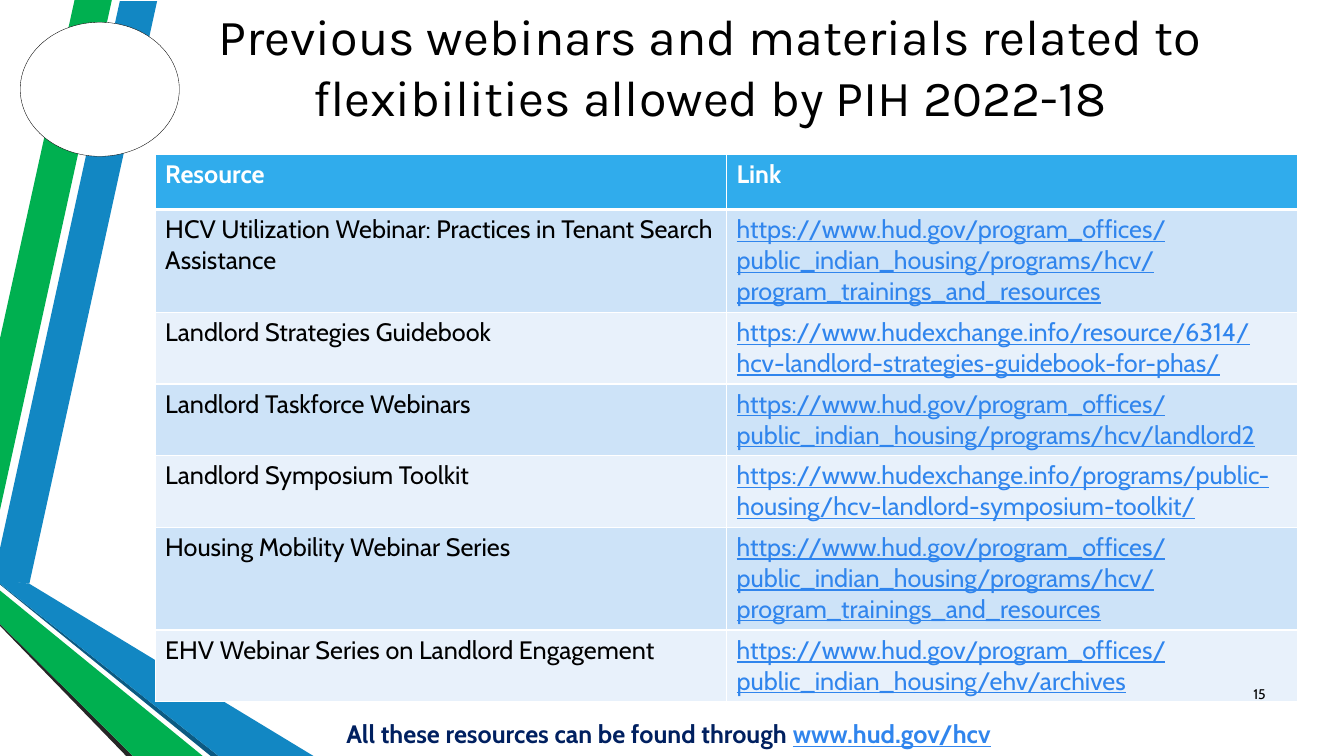
from dataclasses import dataclass

from lxml.etree import SubElement
from pptx import Presentation
from pptx.dml.color import RGBColor
from pptx.enum.shapes import MSO_SHAPE
from pptx.enum.text import MSO_ANCHOR, MSO_AUTO_SIZE, PP_ALIGN
from pptx.oxml.ns import qn
from pptx.util import Cm, Pt

WHITE, BLACK, NAVY = "FFFFFF", "000000", "002060"
BLUE, GREEN, LINK, HEAD = "1287C3", "00B050", "3085ED", "30ACEC"
STRIPES = ("E8F1FB", "CDE3F8")
BODY = "Cabin"


@dataclass
class Band:
    color: str
    points: list[tuple[float, float]]


@dataclass
class Entry:
    name: str
    link: str
    height: float


BANDS = [
    Band(BLUE, [(0, 13.82), (0, 14.63), (0.74, 14.71), (3.96, 0.03), (3.02, 0.03)]),
    Band(GREEN, [(2.82, 0), (1.88, 0), (0, 8.53), (0, 12.85)]),
    Band("262626", [(0, 15.72), (0, 15.77), (3.18, 19.05), (3.35, 19.05)]),
    Band("0C5A82", [(0, 14.71), (0, 14.73), (5.31, 19.05), (5.51, 19.05)]),
    Band(BLUE, [(0, 14.71), (5.51, 19.05), (7.9, 19.05), (0.74, 14.71), (0, 14.61)]),
    Band(GREEN, [(0, 15.72), (3.35, 19.05), (5.11, 19.05), (0, 14.88)]),
]

HUD = "https://www.hud.gov/program_offices/public_indian_housing/"
GUIDE = "https://www.hudexchange.info/"
TRAIN = HUD + "programs/hcv/program_trainings_and_resources"
ENTRIES = [
    Entry("Resource", "Link", 1.39),
    Entry("HCV Utilization Webinar: Practices in Tenant Search Assistance", TRAIN, 2.59),
    Entry("Landlord Strategies Guidebook",
          GUIDE + "resource/6314/hcv-landlord-strategies-guidebook-for-phas/", 1.8),
    Entry("Landlord Taskforce Webinars", HUD + "programs/hcv/landlord2", 1.8),
    Entry("Landlord Symposium Toolkit",
          GUIDE + "programs/public-housing/hcv-landlord-symposium-toolkit/", 1.8),
    Entry("Housing Mobility Webinar Series", TRAIN, 2.59),
    Entry("EHV Webinar Series on Landlord Engagement", HUD + "ehv/archives", 1.8),
]


def rgb(color: str) -> RGBColor:
    return RGBColor.from_string(color)


def style(run, size: float, color: str, bold: bool = False,
          under: bool = False, face: str = BODY) -> None:
    font = run.font
    font.name, font.size, font.bold = face, Pt(size), bold
    font.underline = under
    font.color.rgb = rgb(color)


def place(shape, left: float, top: float, width: float, height: float) -> None:
    shape.left, shape.top = Cm(left), Cm(top)
    shape.width, shape.height = Cm(width), Cm(height)


def paint(shape, color: str) -> None:
    shape.shadow.inherit = False
    shape.fill.solid()
    shape.fill.fore_color.rgb = rgb(color)
    shape.line.fill.background()


def draw_band(slide, band: Band) -> None:
    first, *rest = [(Cm(x), Cm(y)) for x, y in band.points]
    pen = slide.shapes.build_freeform(*first, scale=1.0)
    pen.add_line_segments(rest, close=True)
    paint(pen.convert_to_shape(), band.color)


def edge(cell, bottom: float) -> None:
    props = cell._tc.get_or_add_tcPr()
    widths = {"a:lnL": 1, "a:lnR": 1, "a:lnT": 1, "a:lnB": bottom}
    for tag, width in widths.items():
        line = SubElement(props, qn(tag), w=str(Pt(width)))
        fill = SubElement(line, qn("a:solidFill"))
        SubElement(fill, qn("a:srgbClr"), val=WHITE)


def draw_table(slide, entries: list[Entry]) -> None:
    total = sum(entry.height for entry in entries)
    frame = slide.shapes.add_table(len(entries), 2, Cm(3.91), Cm(3.89),
                                   Cm(28.8), Cm(total))
    table = frame.table
    for column in table.columns:
        column.width = Cm(14.4)
    for i, entry in enumerate(entries):
        table.rows[i].height = Cm(entry.height)
        top = i == 0
        for j, text in enumerate((entry.name, entry.link)):
            cell = table.cell(i, j)
            cell.text_frame.text = text
            color = WHITE if top else (BLACK, LINK)[j]
            run = cell.text_frame.paragraphs[0].runs[0]
            style(run, 18, color, bold=top, under=j == 1 and not top)
            edge(cell, 3 if top else 1)
            cell.fill.solid()
            cell.fill.fore_color.rgb = rgb(HEAD if top else STRIPES[i % 2])


def add_box(slide, left: float, top: float, width: float, height: float):
    box = slide.shapes.add_textbox(Cm(left), Cm(top), Cm(width), Cm(height))
    box.text_frame.word_wrap = True
    return box.text_frame


def main() -> None:
    deck = Presentation()
    deck.slide_width, deck.slide_height = Cm(33.87), Cm(19.05)
    slide = deck.slides.add_slide(deck.slide_layouts[5])

    # Side bands and round badge
    for band in BANDS:
        draw_band(slide, band)
    badge = slide.shapes.add_shape(MSO_SHAPE.OVAL, Cm(0.51), Cm(0.56),
                                   Cm(4.01), Cm(3.38))
    paint(badge, WHITE)
    badge.line.color.rgb = rgb(BLACK)
    badge.line.width = Pt(0.25)

    # Title
    title = slide.shapes.title
    place(title, 3.63, -0.05, 28.52, 3.43)
    frame = title.text_frame
    frame.text = ("Previous webinars and materials related to "
                  "flexibilities allowed by PIH 2022-18")
    frame.word_wrap = True
    frame.auto_size = MSO_AUTO_SIZE.NONE
    frame.vertical_anchor = MSO_ANCHOR.MIDDLE
    frame.paragraphs[0].alignment = PP_ALIGN.CENTER
    style(frame.paragraphs[0].runs[0], 36, BLACK, face="Karla")

    # Resource table
    draw_table(slide, ENTRIES)

    # Slide number
    frame = add_box(slide, 30.58, 16.97, 1.57, 1.02)
    frame.text = "15"
    frame.vertical_anchor = MSO_ANCHOR.MIDDLE
    frame.paragraphs[0].alignment = PP_ALIGN.RIGHT
    style(frame.paragraphs[0].runs[0], 10, BLACK)

    # Closing line
    frame = add_box(slide, 8.48, 17.98, 16.92, 1.02)
    frame.text = "All these resources can be found through "
    line = frame.paragraphs[0]
    style(line.runs[0], 18, NAVY, bold=True)
    site = line.add_run()
    site.text = "www.hud.gov/hcv"
    style(site, 18, LINK, bold=True, under=True)

    deck.save("out.pptx")


if __name__ == "__main__":
    main()
